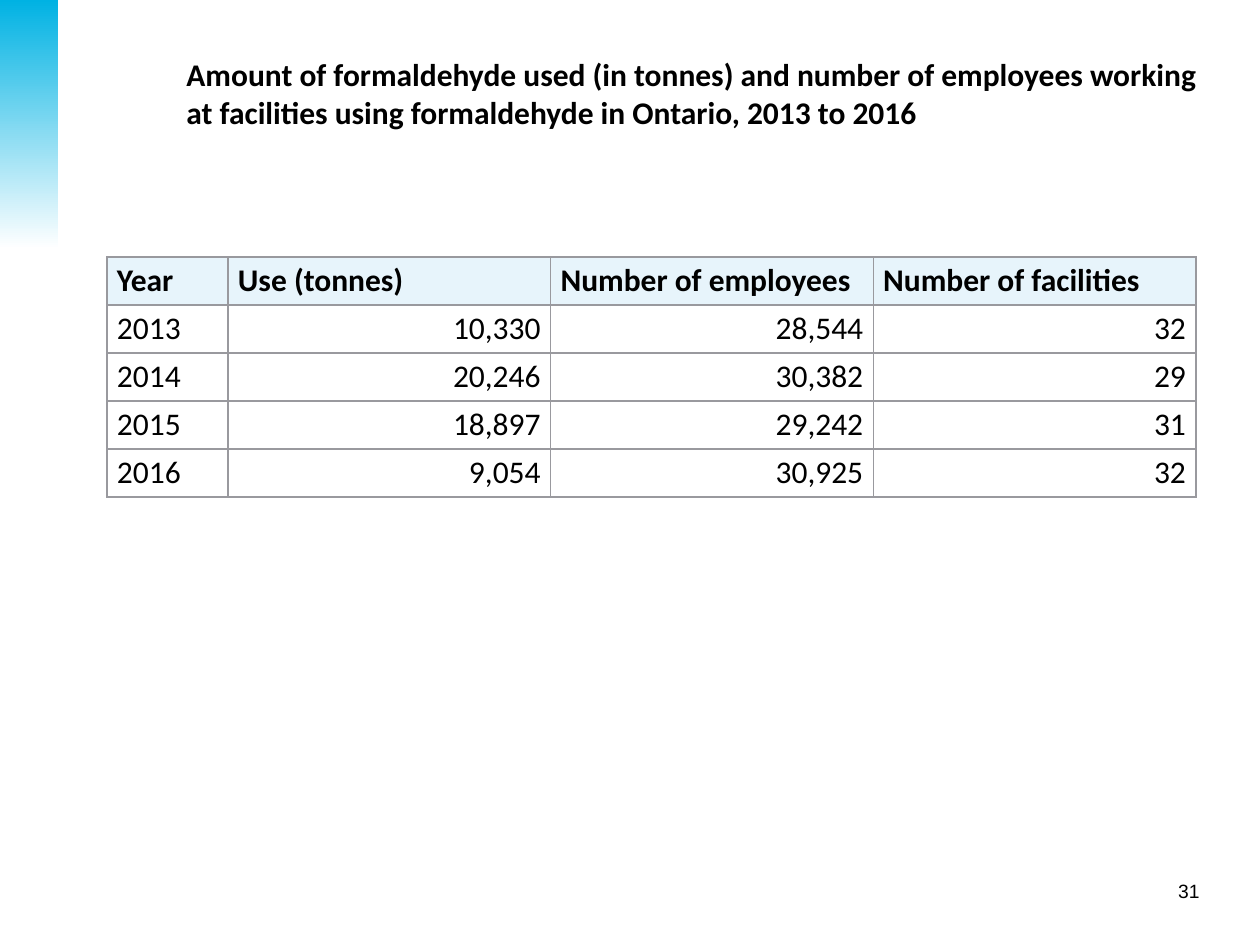
from dataclasses import dataclass

from lxml import etree
from pptx import Presentation
from pptx.dml.color import RGBColor
from pptx.enum.shapes import MSO_SHAPE
from pptx.enum.text import MSO_ANCHOR, PP_ALIGN
from pptx.oxml.ns import qn
from pptx.util import Pt

RECTANGLE = MSO_SHAPE.RECTANGLE
TOP = MSO_ANCHOR.TOP
LEFT, RIGHT = PP_ALIGN.LEFT, PP_ALIGN.RIGHT
EMU_PER_PX = 914400 / 126


@dataclass(frozen=True)
class Theme:
    text: str = "000000"
    accent: str = "00B2E3"
    paper: str = "FFFFFF"
    header: str = "E7F4FB"
    border: str = "99999E"
    border_width: int = 1
    body_font: str = "Calibri"
    number_font: str = "Arial"
    body_size: int = 18
    number_size: int = 11


THEME = Theme()
TITLE = ("Amount of formaldehyde used (in tonnes) and number of employees "
         "working at facilities using formaldehyde in Ontario, 2013 to 2016")
ROWS = [
    ["Year", "Use (tonnes)", "Number of employees", "Number of facilities"],
    ["2013", "10,330", "28,544", "32"],
    ["2014", "20,246", "30,382", "29"],
    ["2015", "18,897", "29,242", "31"],
    ["2016", "9,054", "30,925", "32"],
]
BODY = {"name": THEME.body_font, "size": Pt(THEME.body_size), "bold": False}
HEADING = {**BODY, "bold": True}
NUMBER = {"name": THEME.number_font, "size": Pt(THEME.number_size)}


def px(length):
    return round(length * EMU_PER_PX)


def set_attributes(target, values):
    for name, value in values.items():
        setattr(target, name, value)


def write_text(text_frame, text, font_format, alignment=LEFT):
    paragraph = text_frame.paragraphs[0]
    paragraph.alignment = alignment
    run = paragraph.add_run()
    run.text = text
    set_attributes(run.font, font_format)
    run.font.color.rgb = RGBColor.from_string(THEME.text)


def add_text(slide, box, text, font_format, alignment=LEFT):
    text_frame = slide.shapes.add_textbox(*map(px, box)).text_frame
    set_attributes(text_frame, {"word_wrap": True, "vertical_anchor": TOP})
    write_text(text_frame, text, font_format, alignment)


def add_corner_band(slide, box):
    """Add a rectangle that fades from the accent colour down to the paper."""
    shape = slide.shapes.add_shape(RECTANGLE, *map(px, box))
    shape.shadow.inherit = False
    shape.line.fill.background()
    shape.fill.gradient()
    shape.fill.gradient_angle = 270
    for stop, color in zip(shape.fill.gradient_stops, (THEME.accent, THEME.paper)):
        stop.color.rgb = RGBColor.from_string(color)


def add_cell_borders(cell):
    properties = cell._tc.get_or_add_tcPr()
    for index, side in enumerate(("lnL", "lnR", "lnT", "lnB")):
        line = etree.Element(qn(f"a:{side}"), w=str(Pt(THEME.border_width)))
        fill = etree.SubElement(line, qn("a:solidFill"))
        etree.SubElement(fill, qn("a:srgbClr"), val=THEME.border)
        properties.insert(index, line)


def add_data_table(slide, box, rows, year_width):
    """Add the table: a narrow year column, then equal columns of figures."""
    column_count = len(rows[0])
    table = slide.shapes.add_table(len(rows), column_count, *map(px, box)).table
    table.horz_banding = False
    figure_width = (box[2] - year_width) / (column_count - 1)
    for index, column in enumerate(table.columns):
        column.width = px(figure_width if index else year_width)
    margins = {"margin_left": px(10), "margin_right": px(10),
               "margin_top": px(5), "margin_bottom": px(5)}
    for row_index, row in enumerate(rows):
        for column_index, text in enumerate(row):
            cell = table.cell(row_index, column_index)
            set_attributes(cell, margins)
            is_header = row_index == 0
            if is_header:
                cell.fill.solid()
                cell.fill.fore_color.rgb = RGBColor.from_string(THEME.header)
            else:
                cell.fill.background()
            is_figure = not is_header and column_index > 0
            write_text(cell.text_frame, text, HEADING if is_header else BODY,
                       RIGHT if is_figure else LEFT)
            add_cell_borders(cell)


def main():
    presentation = Presentation()
    set_attributes(presentation, {"slide_width": px(1260), "slide_height": px(945)})
    slide = presentation.slides.add_slide(presentation.slide_layouts[6])
    add_text(slide, (1065, 873, 147, 37), "31", NUMBER, RIGHT)
    add_corner_band(slide, (0, 0, 58, 249))
    add_text(slide, (174, 49, 1066, 115), TITLE, HEADING)
    add_data_table(slide, (107, 257, 1089, 240), ROWS, year_width=121)
    presentation.save("out.pptx")


if __name__ == "__main__":
    main()
